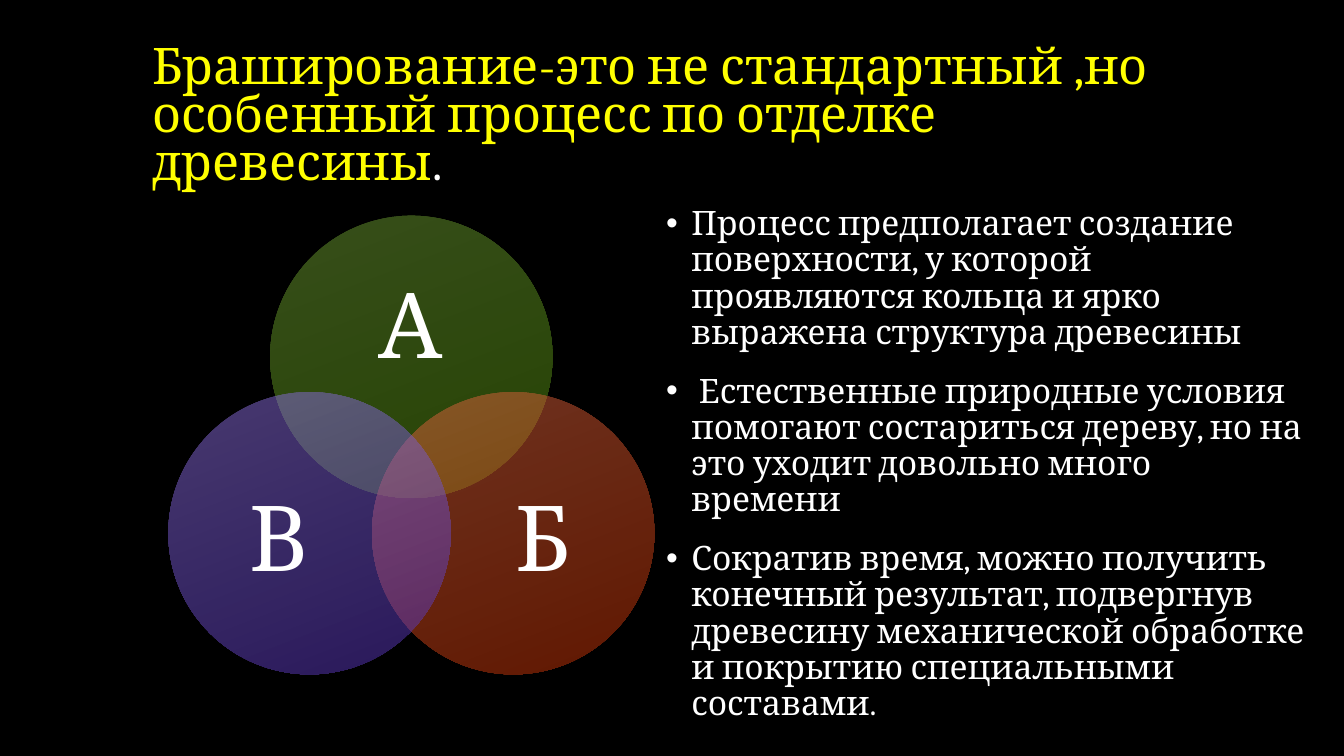
from lxml import etree
from pptx import Presentation
from pptx import util as u
from pptx.dml.color import RGBColor
from pptx.enum import shapes, text
from pptx.oxml.ns import qn

COLOURS = {
    "background": "000000",
    "title": "FFFF00",
    "text": "FFFFFF",
    "green": ("6E9D35", "4E8808"),
    "orange": ("DE6742", "C23002"),
    "violet": ("8F73DF", "5331B6"),
}
FONT = "Cambria"
TITLE = "Браширование-это не стандартный ,но особенный процесс по отделке древесины"
POINTS = [
    "Процесс предполагает создание поверхности, у которой проявляются кольца и ярко выражена структура древесины",
    " Естественные природные условия помогают состариться дереву, но на это уходит довольно много времени",
    "Сократив время, можно получить конечный результат, подвергнув древесину механической обработке и покрытию специальными составами.",
]
DIAMETER = 2.8
CIRCLES = [
    ("А", "green", (1.01, 0), (0.37, 0.49, 2.05, 1.26)),
    ("Б", "orange", (2.02, 1.75), (0.86, 0.72, 1.68, 1.54)),
    ("В", "violet", (0, 1.75), (0.26, 0.72, 1.68, 1.54)),
]


def rgb(value):
    return RGBColor.from_string(value)


def style(span, size, colour):
    span.font.name = FONT
    span.font.size = u.Pt(size)
    span.font.color.rgb = rgb(COLOURS[colour])


def add_text_box(page, box, anchor, margins=True):
    frame = page.shapes.add_textbox(*map(u.Inches, box)).text_frame
    frame.word_wrap = True
    frame.vertical_anchor = anchor
    if not margins:
        frame.margin_left = frame.margin_right = 0
        frame.margin_top = frame.margin_bottom = 0
    return frame


def add_title(page, box):
    frame = add_text_box(page, box, text.MSO_ANCHOR.BOTTOM)
    para = frame.paragraphs[0]
    para.line_spacing = 0.8
    for wording, colour in ((TITLE, "title"), (".", "text")):
        span = para.add_run()
        span.text = wording
        style(span, 36, colour)


def add_circle(page, box, colours):
    circle = page.shapes.add_shape(shapes.MSO_SHAPE.OVAL, *map(u.Inches, box))
    circle.shadow.inherit = False
    circle.line.fill.background()
    circle.fill.gradient()
    circle.fill.gradient_angle = 291
    for stop, colour, position in zip(circle.fill.gradient_stops, colours, (0, 1)):
        stop.color.rgb = rgb(colour)
        stop.position = position
    for colour in circle._element.spPr.iter(qn("a:srgbClr")):
        etree.SubElement(colour, qn("a:alpha"), val="50000")


def add_venn(page, left, top):
    for letter, colour, (across, down), (inset, drop, width, height) in CIRCLES:
        x, y = left + across, top + down
        add_circle(page, (x, y, DIAMETER, DIAMETER), COLOURS[colour])
        label = (x + inset, y + drop, width, height)
        frame = add_text_box(page, label, text.MSO_ANCHOR.MIDDLE, margins=False)
        para = frame.paragraphs[0]
        para.text = letter
        para.alignment = text.PP_ALIGN.CENTER
        para.line_spacing = 0.9
        style(para.runs[0], 65, "text")


def add_points(page, box):
    frame = add_text_box(page, box, text.MSO_ANCHOR.TOP)
    frame.text = "\n".join(POINTS)
    for index, para in enumerate(frame.paragraphs):
        para.line_spacing = 0.9
        if index:
            para.space_before = u.Pt(16)
        properties = para._p.get_or_add_pPr()
        properties.set("marL", str(u.Inches(0.25)))
        properties.set("indent", str(u.Inches(-0.25)))
        etree.SubElement(properties, qn("a:buFont"), typeface="Arial")
        etree.SubElement(properties, qn("a:buChar"), char="•")
        style(para.runs[0], 24, "text")


def main():
    deck = Presentation()
    deck.slide_width, deck.slide_height = u.Inches(13.33), u.Inches(7.5)
    page = deck.slides.add_slide(deck.slide_layouts[6])
    page.background.fill.solid()
    page.background.fill.fore_color.rgb = rgb(COLOURS["background"])
    add_title(page, (1.41, 0.42, 10.5, 1.52))
    add_venn(page, 1.67, 2.14)
    add_points(page, (6.51, 2, 6.54, 4.75))
    deck.save("out.pptx")


if __name__ == "__main__":
    main()
